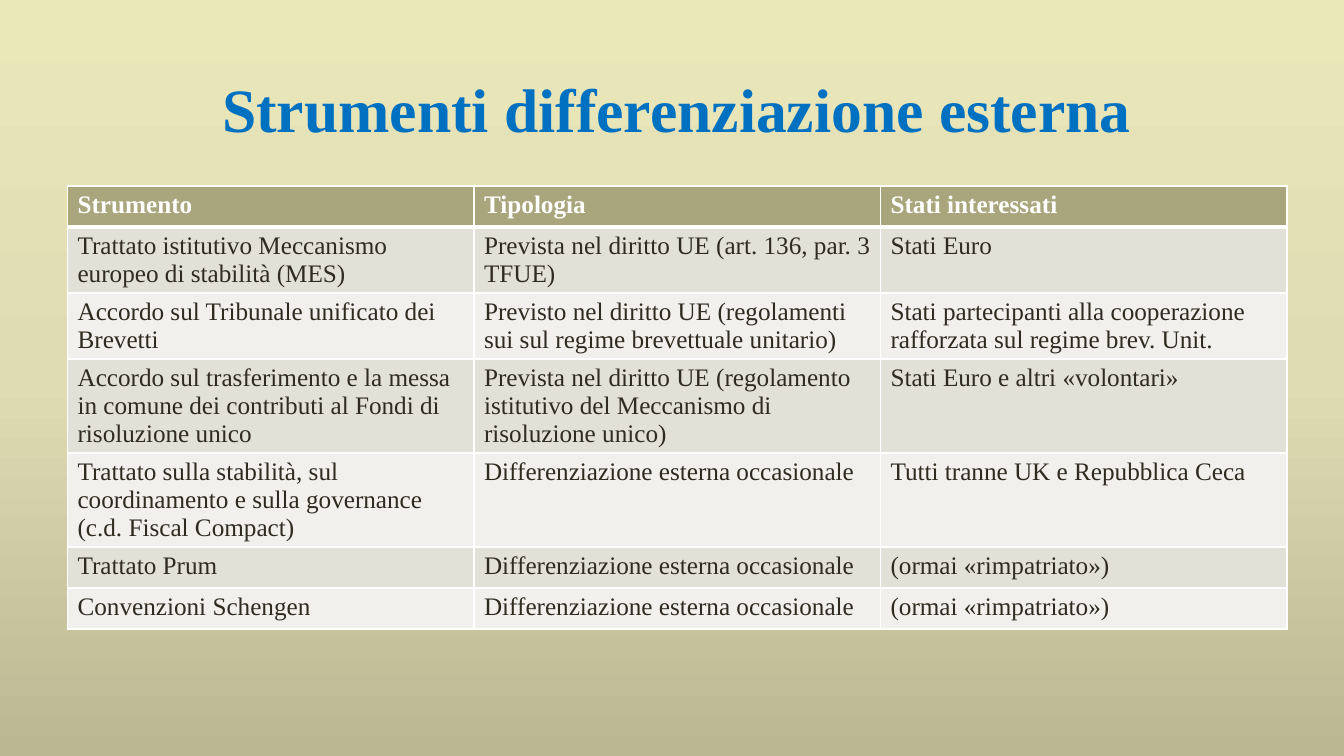
from copy import deepcopy

from lxml import etree
from pptx import Presentation
from pptx import util as u
from pptx.dml.color import RGBColor
from pptx.enum import text
from pptx.oxml.ns import qn

TITLE = "Strumenti differenziazione esterna"
OCCASIONAL = "Differenziazione esterna occasionale"
ROWS = [
    ("Strumento", "Tipologia", "Stati interessati"),
    ("Trattato istitutivo Meccanismo europeo di stabilità (MES)",
     "Prevista nel diritto UE (art. 136, par. 3 TFUE)",
     "Stati Euro"),
    ("Accordo sul Tribunale unificato dei Brevetti",
     "Previsto nel diritto UE (regolamenti sui sul regime brevettuale unitario)",
     "Stati partecipanti alla cooperazione rafforzata sul regime brev. Unit."),
    ("Accordo sul trasferimento e la messa in comune dei contributi al Fondi di risoluzione unico",
     "Prevista nel diritto UE (regolamento istitutivo del Meccanismo di risoluzione unico)",
     "Stati Euro e altri «volontari»"),
    ("Trattato sulla stabilità, sul coordinamento e sulla governance (c.d. Fiscal Compact)",
     OCCASIONAL, "Tutti tranne UK e Repubblica Ceca"),
    ("Trattato Prum", OCCASIONAL, "(ormai «rimpatriato»)"),
    ("Convenzioni Schengen", OCCASIONAL, "(ormai «rimpatriato»)"),
]
ROW_HEIGHTS = [41, 66, 66, 94, 94, 41, 41]
COLUMN_WIDTH = 406.5

FONT = "Times New Roman"
BLUE = RGBColor(0x00, 0x70, 0xC0)
WHITE = RGBColor(0xFF, 0xFF, 0xFF)
INK = RGBColor(0x2F, 0x2B, 0x20)
HEADER = RGBColor(0xA9, 0xA5, 0x7C)
BANDS = [RGBColor(0xF1, 0xF0, 0xEC), RGBColor(0xE2, 0xE1, 0xD7)]
BACKGROUND = [
    (0, RGBColor(0xEA, 0xE7, 0xB9)),
    (0.5, RGBColor(0xDF, 0xDB, 0xB3)),
    (1, RGBColor(0xBA, 0xB7, 0x92)),
]


def px(length):
    return u.Emu(round(length * 12192000 / 1344))


def write(frame, content, size=18, color=INK, bold=False, align=None, spacing=None):
    paragraph = frame.paragraphs[0]
    paragraph.alignment = align
    paragraph.line_spacing = spacing
    run = paragraph.add_run()
    run.text = content
    run.font.name = FONT
    run.font.size = u.Pt(size)
    run.font.bold = bold
    run.font.color.rgb = color


def set_borders(cell, bottom=1):
    properties = cell._tc.get_or_add_tcPr()
    sides = {"a:lnL": 1, "a:lnR": 1, "a:lnT": 1, "a:lnB": bottom}
    for position, (side, width) in enumerate(sides.items()):
        line = etree.Element(qn(side), w=str(u.Pt(width)))
        fill = etree.SubElement(line, qn("a:solidFill"))
        etree.SubElement(fill, qn("a:srgbClr"), val=str(WHITE))
        properties.insert(position, line)


def paint_background(slide):
    fill = slide.background.fill
    fill.gradient()
    fill.gradient_angle = 270
    stops = slide.background._cSld.find(".//" + qn("a:gsLst"))
    stops.append(deepcopy(stops[-1]))
    for stop, (position, color) in zip(fill.gradient_stops, BACKGROUND):
        stop.position = position
        stop.color.rgb = color


def add_title(slide):
    title = slide.shapes.title
    title.left, title.top, title.width, title.height = map(px, (41, 40, 1272, 146))
    title.text_frame.vertical_anchor = text.MSO_ANCHOR.MIDDLE
    write(title.text_frame, TITLE, size=44, color=BLUE, bold=True,
          align=text.PP_ALIGN.CENTER, spacing=0.9)


def add_instruments(slide):
    columns = len(ROWS[0])
    table = slide.shapes.add_table(
        len(ROWS), columns, px(67.5), px(186),
        px(COLUMN_WIDTH * columns), px(sum(ROW_HEIGHTS))).table
    for column in table.columns:
        column.width = px(COLUMN_WIDTH)
    for index, (contents, height) in enumerate(zip(ROWS, ROW_HEIGHTS)):
        header = index == 0
        table.rows[index].height = px(height)
        for cell, content in zip(table.rows[index].cells, contents):
            cell.fill.solid()
            cell.fill.fore_color.rgb = HEADER if header else BANDS[index % 2]
            set_borders(cell, bottom=3 if header else 1)
            write(cell.text_frame, content, color=WHITE if header else INK, bold=header)


def main():
    presentation = Presentation()
    presentation.slide_width = px(1344)
    presentation.slide_height = px(756)
    slide = presentation.slides.add_slide(presentation.slide_layouts[5])
    paint_background(slide)
    add_title(slide)
    add_instruments(slide)
    presentation.save("out.pptx")


if __name__ == "__main__":
    main()
